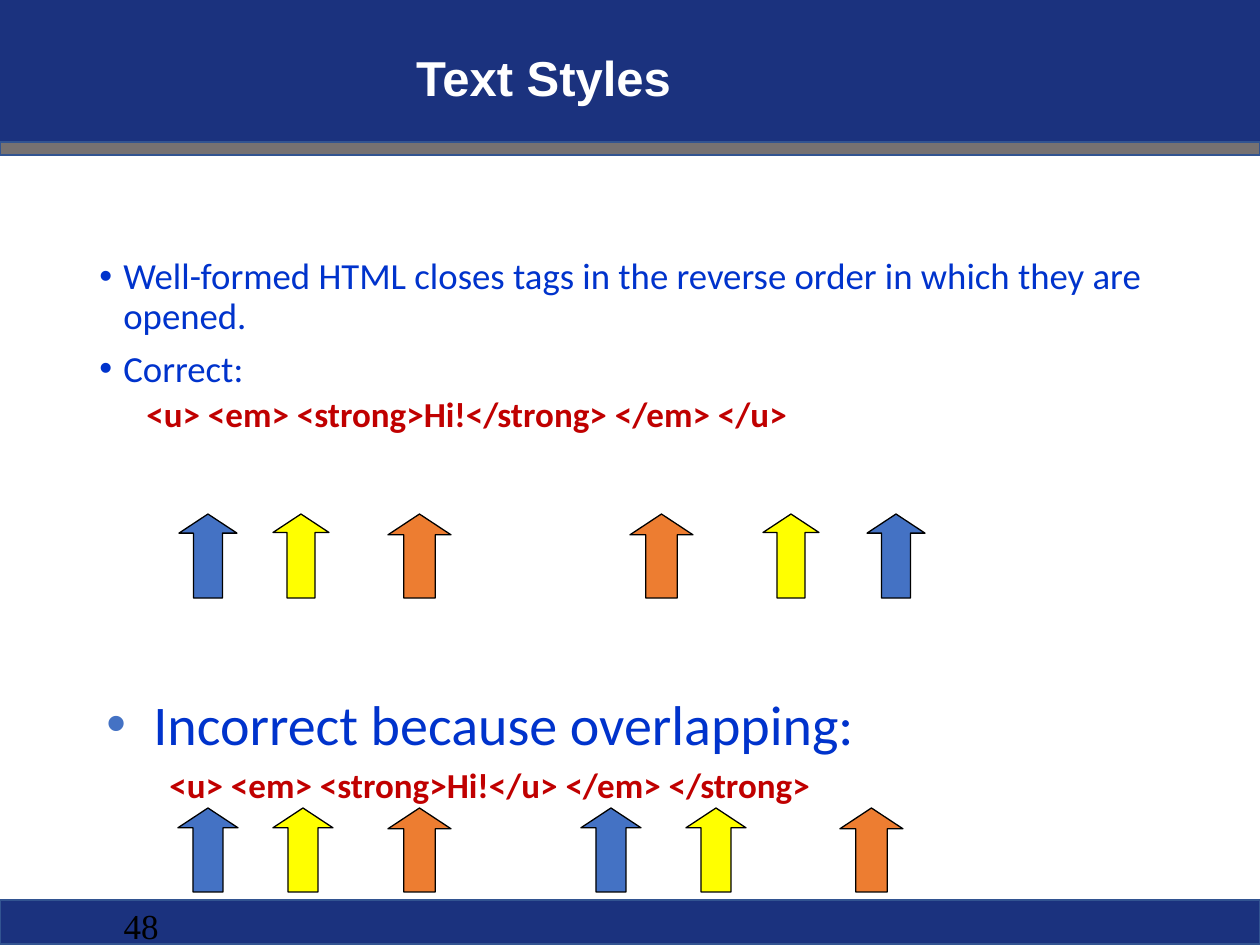
"""Builds the "Text Styles" slide on the nesting order of HTML tags."""
import pptx
import pptx.dml.color
import pptx.enum.shapes
import pptx.enum.text
import pptx.util
from lxml import etree

PX = 914400 / 126
NAVY = pptx.dml.color.RGBColor(0x1B, 0x32, 0x7E)
EDGE = pptx.dml.color.RGBColor(0x32, 0x54, 0x91)
GRAY = pptx.dml.color.RGBColor(0x76, 0x71, 0x71)
WHITE = pptx.dml.color.RGBColor(0xFF, 0xFF, 0xFF)
BLACK = pptx.dml.color.RGBColor(0x00, 0x00, 0x00)
BLUE = pptx.dml.color.RGBColor(0x44, 0x72, 0xC4)
YELLOW = pptx.dml.color.RGBColor(0xFF, 0xFF, 0x00)
ORANGE = pptx.dml.color.RGBColor(0xED, 0x7D, 0x31)
TEXT_BLUE = pptx.dml.color.RGBColor(0x00, 0x33, 0xCC)
CODE_RED = pptx.dml.color.RGBColor(0xC0, 0x00, 0x00)
MIDDLE = pptx.enum.text.MSO_ANCHOR.MIDDLE
TOP = pptx.enum.text.MSO_ANCHOR.TOP
LEFT = pptx.enum.text.PP_ALIGN.LEFT
CENTER = pptx.enum.text.PP_ALIGN.CENTER
RIGHT = pptx.enum.text.PP_ALIGN.RIGHT

deck = pptx.Presentation()
deck.slide_width = round(1260 * PX)
deck.slide_height = round(945 * PX)
slide = deck.slides.add_slide(deck.slide_layouts[6])


def add_preset(shapes, kind, box, fill, line, width):
    preset = shapes.add_shape(kind, *[round(length * PX) for length in box])
    preset.shadow.inherit = False
    preset.fill.solid()
    preset.fill.fore_color.rgb = fill
    if line is None:
        preset.line.fill.background()
    else:
        preset.line.color.rgb = line
        preset.line.width = pptx.util.Pt(width)
    return preset


def add_text(box, anchor, align, spacing, lines):
    frame = slide.shapes.add_textbox(*[round(length * PX) for length in box]).text_frame
    frame.word_wrap = True
    frame.vertical_anchor = anchor
    for index, (text, size, font, color, bold, margin, indent, before, bullet) in enumerate(lines):
        paragraph = frame.add_paragraph() if index else frame.paragraphs[0]
        paragraph.text = text
        paragraph.alignment = align
        paragraph.line_spacing = spacing
        if index:
            paragraph.space_before = pptx.util.Pt(before)
        properties = paragraph._p.get_or_add_pPr()
        properties.set("marL", str(round(margin * PX)))
        properties.set("indent", str(round(indent * PX)))
        namespace = properties.nsmap["a"]
        if bullet is not None:
            bullet_color = etree.SubElement(properties, f"{{{namespace}}}buClr")
            etree.SubElement(bullet_color, f"{{{namespace}}}srgbClr", val=str(bullet))
            etree.SubElement(properties, f"{{{namespace}}}buFont", typeface="Arial")
            etree.SubElement(properties, f"{{{namespace}}}buChar", char="•")
        else:
            paragraph.level = 1 if margin else 0
            etree.SubElement(properties, f"{{{namespace}}}buNone")
        for run in paragraph.runs:
            run.font.size = pptx.util.Pt(size)
            run.font.name = font
            run.font.bold = bold
            run.font.color.rgb = color


for band_box, band_fill, band_line in [
    ((0, 900, 1260, 44), NAVY, EDGE),
    ((0, 0, 1260, 142), NAVY, None),
    ((0, 142, 1260, 13), GRAY, EDGE),
]:
    add_preset(slide.shapes, pptx.enum.shapes.MSO_SHAPE.RECTANGLE, band_box, band_fill, band_line, 1)

add_text((2, 904, 169, 44), MIDDLE, RIGHT, 1.0, [
    ("48", 20, "Times New Roman", BLACK, False, 0, 0, 0, None),
])
add_text((55, 21, 977, 120), MIDDLE, CENTER, 0.9, [
    ("Text Styles", 28, "Arial", WHITE, True, 0, 0, 0, None),
])
add_text((87, 252, 1086, 600), TOP, LEFT, 0.9, [
    ("Well-formed HTML closes tags in the reverse order in which they are opened.",
     21, "Calibri", TEXT_BLUE, False, 24, -24, 0, TEXT_BLUE),
    ("Correct:", 21, "Calibri", TEXT_BLUE, False, 24, -24, 7.5, TEXT_BLUE),
    ("<u> <em> <strong>Hi!</strong> </em> </u>",
     20, "Calibri", CODE_RED, True, 71, -24, 3.8, None),
])
add_text((94, 683, 1071, 179), TOP, LEFT, 1.0, [
    ("Incorrect because overlapping:", 32, "Calibri", TEXT_BLUE, False, 47, -47, 0, BLUE),
    ("<u> <em> <strong>Hi!</u> </em> </strong>",
     20, "Calibri", CODE_RED, True, 102, -39, 4, None),
])

for arrow_top, tag_pairs in [
    (514, [(BLUE, 58, (179, 867)), (YELLOW, 56, (273, 763)), (ORANGE, 63, (388, 630))]),
    (808, [(BLUE, 60, (178, 581)), (YELLOW, 60, (273, 686)), (ORANGE, 63, (388, 840))]),
]:
    for tag_color, arrow_width, arrow_lefts in tag_pairs:
        tag_pair = slide.shapes.add_group_shape()
        for arrow_left in arrow_lefts:
            arrow = add_preset(tag_pair.shapes, pptx.enum.shapes.MSO_SHAPE.UP_ARROW,
                               (arrow_left, arrow_top, arrow_width, 84), tag_color, BLACK, 0.75)
            arrow.adjustments[0] = 0.5
            arrow.adjustments[1] = 0.33

deck.save("out.pptx")
